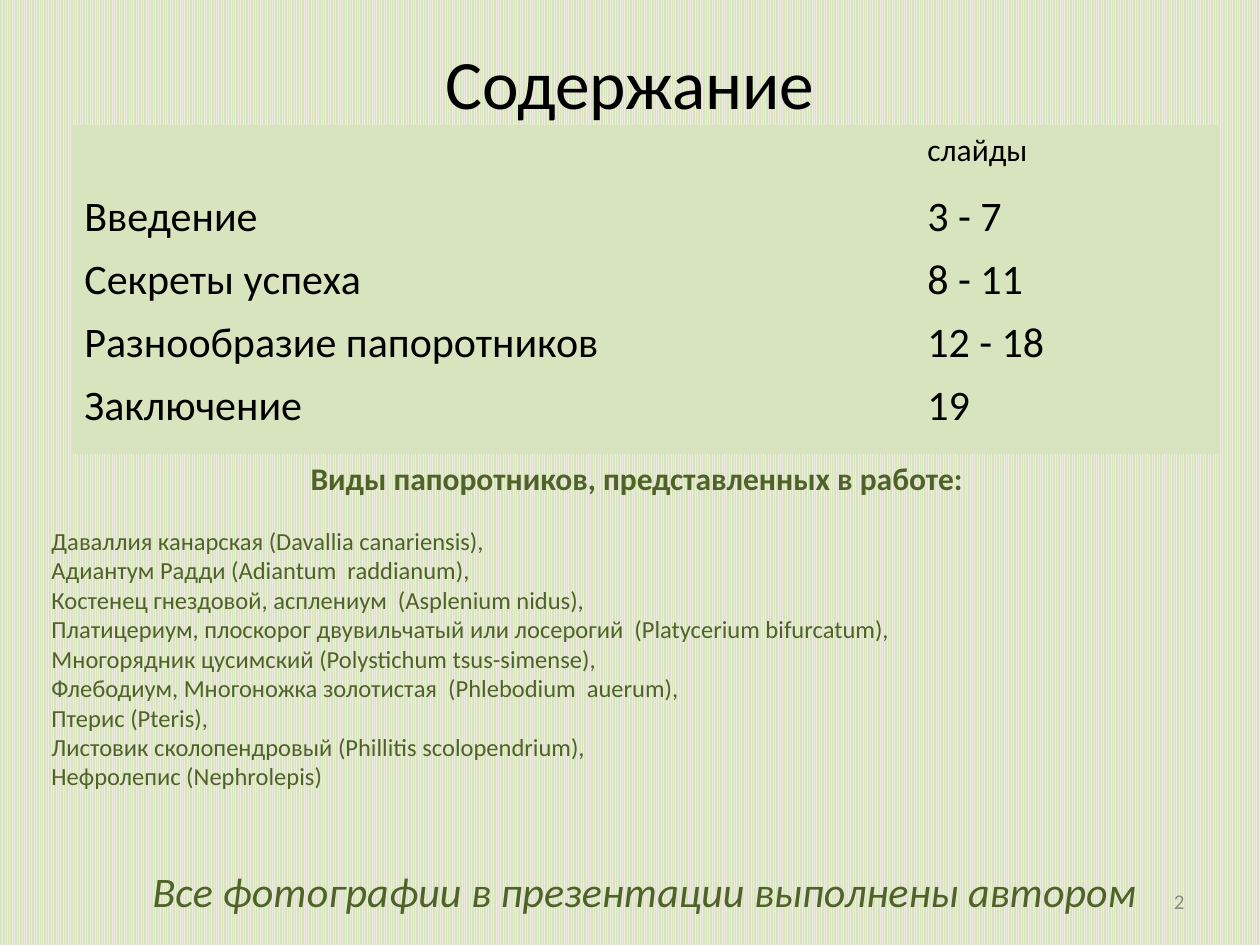
from pptx import Presentation
from pptx import util as u
from pptx.dml.color import RGBColor
from pptx.enum import dml, text

BLACK = RGBColor(0x00, 0x00, 0x00)
GREEN = RGBColor(0x4F, 0x62, 0x28)
LIGHT = RGBColor(0xD7, 0xE4, 0xBD)
CREAM = RGBColor(0xEE, 0xEC, 0xE1)
GRAY = RGBColor(0x8C, 0x8C, 0x8C)
PLAIN = "{2D5ABB26-0587-4C30-8999-92F81FD0307C}"
LEFT, MID, RIGHT = text.PP_ALIGN.LEFT, text.PP_ALIGN.CENTER, text.PP_ALIGN.RIGHT

ROWS = [
    ("", "слайды"),
    ("Введение", "3 - 7"),
    ("Секреты успеха", "8 - 11"),
    ("Разнообразие папоротников", "12 - 18"),
    ("Заключение", "19"),
]
WIDTHS = [6.69, 2.41]
HEIGHTS = [0.48, 0.47, 0.44, 0.49, 0.63]
FERNS = [
    "Даваллия канарская (Davallia canariensis),",
    "Адиантум Радди (Adiantum  raddianum),",
    "Костенец гнездовой, асплениум  (Asplenium nidus),",
    "Платицериум, плоскорог двувильчатый или лосерогий  (Platycerium bifurcatum),",
    "Многорядник цусимский (Polystichum tsus-simense),",
    "Флебодиум, Многоножка золотистая  (Phlebodium  auerum),",
    "Птерис (Pteris),",
    "Листовик сколопендровый (Phillitis scolopendrium),",
    "Нефролепис (Nephrolepis)",
]


def write(para, words, size=18, color=BLACK, bold=False, italic=False,
          align=LEFT, after=0, font="Calibri"):
    para.alignment = align
    para.space_after = u.Pt(after)
    run = para.add_run()
    run.text = words
    run.font.name = font
    run.font.size = u.Pt(size)
    run.font.color.rgb = color
    run.font.bold = bold
    run.font.italic = italic


class Page:
    def __init__(self, deck):
        self.slide = deck.slides.add_slide(deck.slide_layouts[6])

    def ground(self, fore, back):
        fill = self.slide.background.fill
        fill.patterned()
        fill.pattern = dml.MSO_PATTERN.LIGHT_VERTICAL
        fill.fore_color.rgb = fore
        fill.back_color.rgb = back

    def box(self, left, top, width, height, anchor=text.MSO_ANCHOR.TOP):
        frame = self.slide.shapes.add_textbox(
            *map(u.Inches, (left, top, width, height))).text_frame
        frame.word_wrap = True
        frame.vertical_anchor = anchor
        return frame

    def label(self, words, place, anchor=text.MSO_ANCHOR.TOP, **style):
        write(self.box(*place, anchor).paragraphs[0], words, **style)

    def listing(self, head, items, place):
        frame = self.box(*place)
        write(frame.paragraphs[0], head, color=GREEN, bold=True, align=MID, after=17)
        for item in items:
            write(frame.add_paragraph(), item, size=14, color=GREEN)

    def table(self, rows, widths, heights, left, top):
        table = self.slide.shapes.add_table(
            len(rows), len(widths), u.Inches(left), u.Inches(top),
            u.Inches(sum(widths)), u.Inches(sum(heights))).table
        table.first_row = table.horz_banding = False
        table._tbl.tblPr[0].text = PLAIN
        for col, width in zip(table.columns, widths):
            col.width = u.Inches(width)
        for num, (row, height) in enumerate(zip(rows, heights)):
            table.rows[num].height = u.Inches(height)
            for pos, words in enumerate(row):
                cell = table.cell(num, pos)
                cell.fill.solid()
                cell.fill.fore_color.rgb = LIGHT
                if words:
                    write(cell.text_frame.paragraphs[0], words, size=24 if num else 18)


def main():
    deck = Presentation()
    deck.slide_width, deck.slide_height = u.Inches(10), u.Inches(7.5)
    page = Page(deck)
    page.ground(CREAM, LIGHT)
    page.label("Содержание", (0.5, 0.3, 9, 0.69), text.MSO_ANCHOR.MIDDLE,
               size=39.6, align=MID)
    page.table(ROWS, WIDTHS, HEIGHTS, 0.57, 0.99)
    page.label("Все фотографии в презентации выполнены автором",
               (0.31, 6.82, 9.61, 0.5), size=24, color=GREEN, italic=True, align=MID)
    page.listing("Виды папоротников, представленных в работе:", FERNS,
                 (0.31, 3.59, 9.49, 2.76))
    page.label("2", (7.17, 6.95, 2.33, 0.4), text.MSO_ANCHOR.MIDDLE,
               size=12, color=GRAY, align=RIGHT)
    deck.save("out.pptx")


if __name__ == "__main__":
    main()
